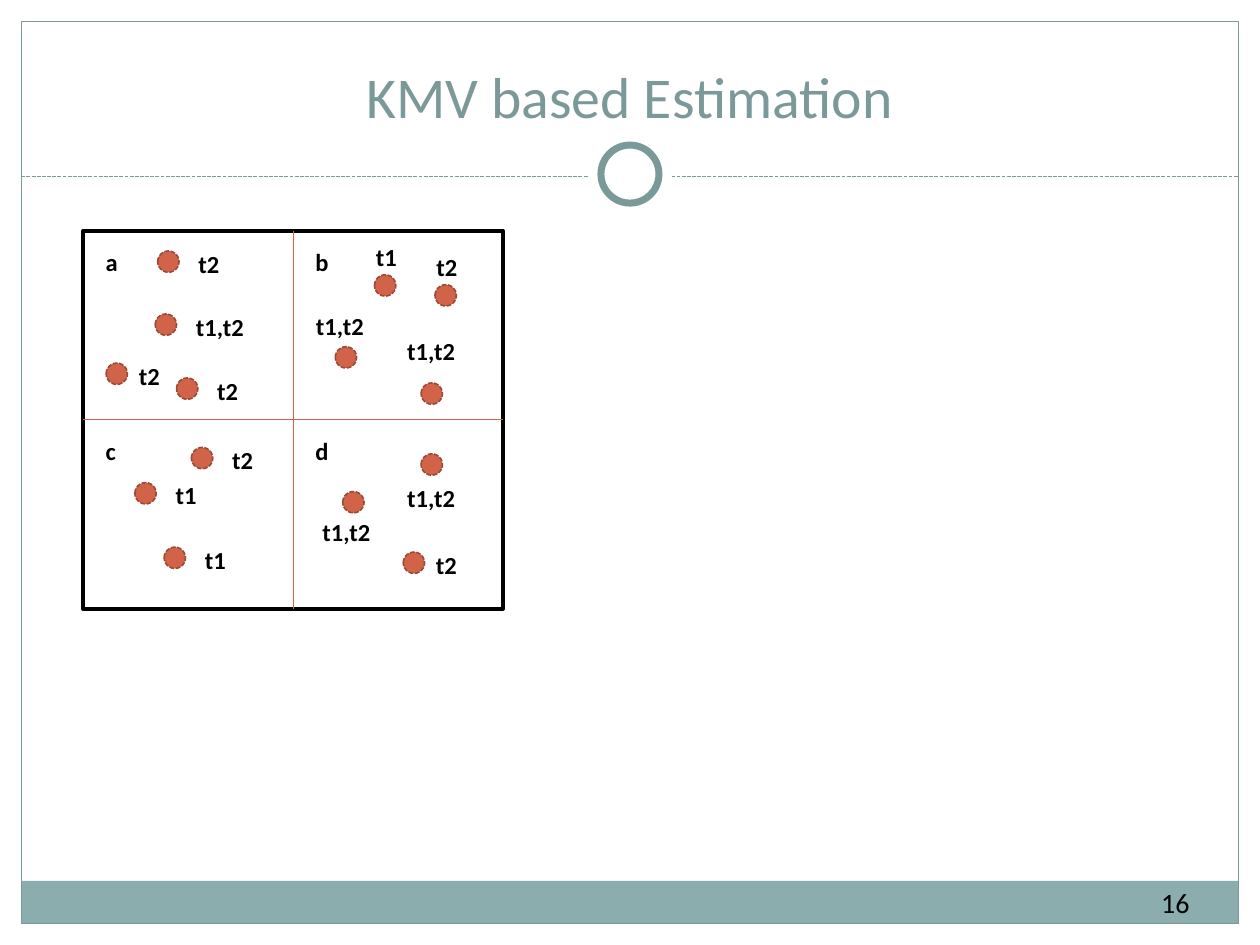
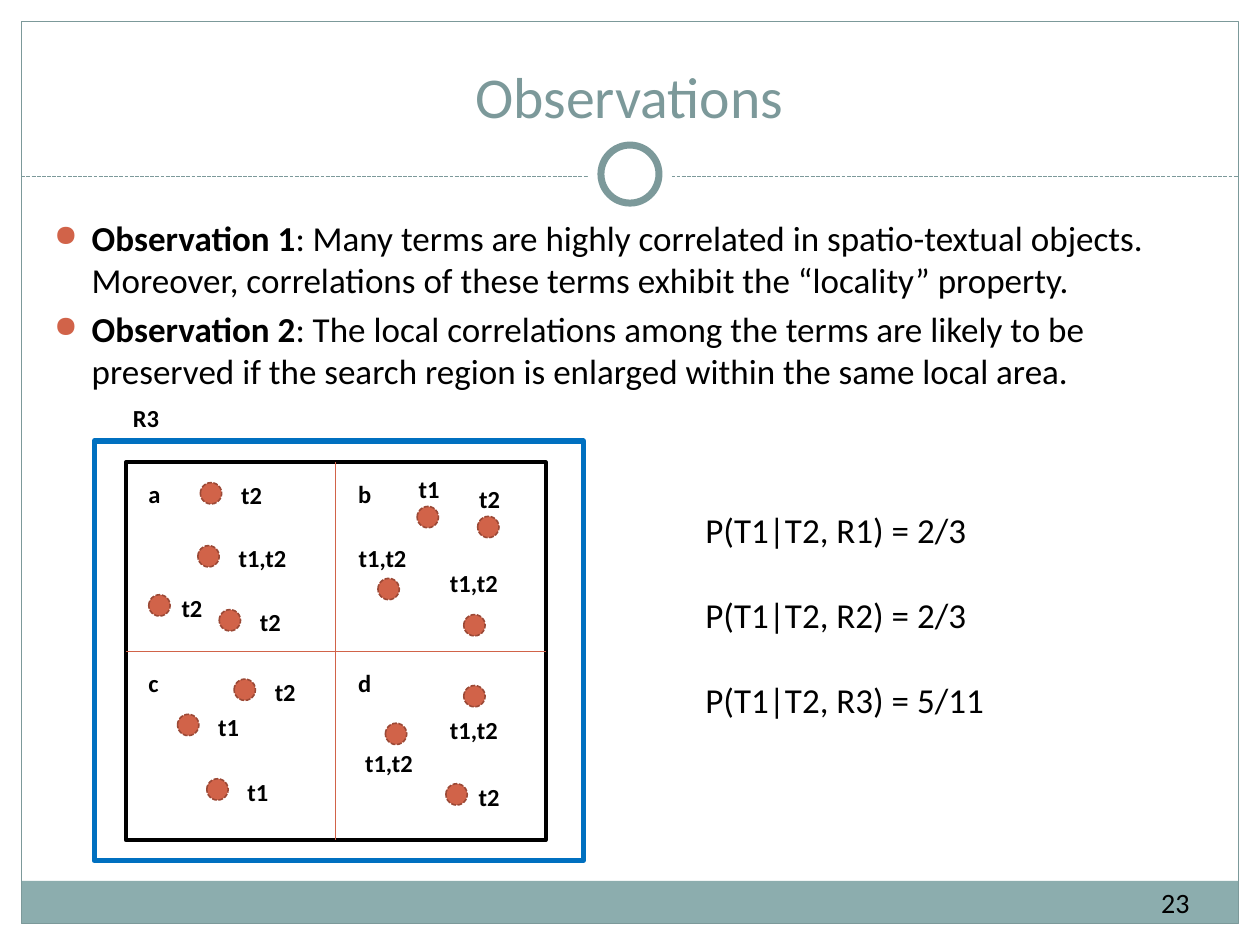
from typing import NamedTuple

from lxml.etree import SubElement
from pptx import Presentation
from pptx.dml.color import RGBColor
from pptx.enum.dml import MSO_LINE
from pptx.enum.shapes import MSO_CONNECTOR as LINK, MSO_SHAPE as SHAPE
from pptx.enum.text import MSO_ANCHOR as ANCHOR, MSO_AUTO_SIZE as FIT, PP_ALIGN as ALIGN
from pptx.oxml.ns import qn
from pptx.util import Cm, Pt


class Box(NamedTuple):
    x: float
    y: float
    w: float
    h: float


FONT = "Calibri"
WHITE = RGBColor(0xFF, 0xFF, 0xFF)
BLACK = RGBColor(0, 0, 0)
TEAL = RGBColor(0x7C, 0x99, 0x9A)
BAND = RGBColor(0x8C, 0xAD, 0xAE)
RUST = RGBColor(0xD1, 0x63, 0x49)
BROWN = RGBColor(0x9B, 0x49, 0x36)
BLUE = RGBColor(0, 0x70, 0xC0)

FRAME = Box(0.43, 0.43, 24.54, 18.19)
DOT = 0.43
RIGHT, NEAR = (0.57, -0.17), (0.41, -0.17)
ABOVE, OVER, HIGH = (-0.22, -0.78), (-0.64, -0.84), (-0.53, -1.07)
BELOW, UNDER = (-0.53, 0.46), (-0.66, 0.38)

POINTS = [
    (1.5, 0.41, "t2", RIGHT),
    (1.45, 1.68, "t1,t2", RIGHT),
    (0.46, 2.67, "t2", NEAR),
    (1.88, 2.97, "t2", RIGHT),
    (5.87, 0.89, "t1", ABOVE),
    (7.09, 1.09, "t2", ABOVE),
    (5.08, 2.34, "t1,t2", OVER),
    (6.81, 3.07, "t1,t2", HIGH),
    (2.18, 4.37, "t2", RIGHT),
    (1.04, 5.08, "t1", RIGHT),
    (1.63, 6.38, "t1", RIGHT),
    (6.81, 4.5, "t1,t2", BELOW),
    (5.23, 5.26, "t1,t2", UNDER),
    (6.45, 6.48, "t2", NEAR),
]

NOTES = [
    ("Observation 1", ": Many terms are highly correlated in spatio-textual objects. "
     "Moreover, correlations of these terms exhibit the “locality” property."),
    ("Observation 2", ": The local correlations among the terms are likely to be "
     "preserved if the search region is enlarged within the same local area."),
]
ODDS = ["P(T1|T2, R1) = 2/3", "P(T1|T2, R2) = 2/3", "P(T1|T2, R3) = 5/11"]


def place(box):
    return [Cm(side) for side in box]


def stroke(line, tint, width, dashed=False):
    line.color.rgb = tint
    line.width = Pt(width)
    if dashed:
        line.dash_style = MSO_LINE.SQUARE_DOT


def draw(shapes, kind, box, fill=None, tint=None, width=0.75, dashed=False):
    shape = shapes.add_shape(kind, *place(box))
    shape.shadow.inherit = False
    if fill is None:
        shape.fill.background()
    else:
        shape.fill.solid()
        shape.fill.fore_color.rgb = fill
    if tint is None:
        shape.line.fill.background()
    else:
        stroke(shape.line, tint, width, dashed)


def rule(shapes, x1, y1, x2, y2, tint, dashed=False):
    line = shapes.add_connector(LINK.STRAIGHT, Cm(x1), Cm(y1), Cm(x2), Cm(y2))
    stroke(line.line, tint, 0.75, dashed)
    SubElement(line._element.spPr, qn("a:effectLst"))


def style(para, size, tint=BLACK, bold=None):
    para.font.name = FONT
    para.font.size = Pt(size)
    para.font.color.rgb = tint
    para.font.bold = bold


def write(shapes, box, lines, size, bold=None, gap=0):
    frame = shapes.add_textbox(*place(box)).text_frame
    frame.word_wrap = True
    for i, line in enumerate(lines):
        para = frame.add_paragraph() if i else frame.paragraphs[0]
        para.text = line
        style(para, size, bold=bold)
        if i:
            para.space_before = Pt(gap)
    return frame


def label(shapes, x, y, text):
    write(shapes, Box(x, y, 2.03, 0.86), [text], 14, bold=True)


def ring(shapes, x, y, size, **look):
    draw(shapes, SHAPE.OVAL, Box(x - size / 2, y - size / 2, size, size), WHITE, **look)


def base(deck, text, number, box=FRAME):
    slide = deck.slides.add_slide(deck.slide_layouts[5])
    shapes = slide.shapes
    x, y, w, h = box
    mid, split = x + w / 2, y + 3.13
    draw(shapes, SHAPE.RECTANGLE, Box(x, y + h - 0.86, w, 0.86), BAND)
    draw(shapes, SHAPE.RECTANGLE, box, tint=TEAL)
    rule(shapes, x, split, x + w, split, TEAL, dashed=True)
    ring(shapes, mid, split - 0.05, 1.7)
    ring(shapes, mid, split - 0.05, 1.17, tint=TEAL, width=4)

    title = shapes.title
    title.left, title.top, title.width, title.height = place(
        Box(x + 0.41, y + 0.21, w - 0.84, 2.11))
    frame = title.text_frame
    frame.text = text
    frame.auto_size = FIT.NONE
    frame.vertical_anchor = ANCHOR.BOTTOM
    frame.paragraphs[0].alignment = ALIGN.CENTER
    style(frame.paragraphs[0], 33, TEAL)

    page = write(shapes, Box(x + w - 1.91, y + h - 1.04, 1.27, 1.22), [number], 16)
    page.margin_left = page.margin_right = Cm(0.13)
    page.vertical_anchor = ANCHOR.MIDDLE
    page.paragraphs[0].alignment = ALIGN.CENTER
    return shapes


def grid(shapes, box):
    x, y, w, h = box
    parts = shapes.add_group_shape().shapes
    draw(parts, SHAPE.RECTANGLE, box, tint=BLACK, width=2.25)
    rule(parts, x, y + h / 2, x + w, y + h / 2, RUST)
    rule(parts, x + w / 2, y, x + w / 2, y + h, RUST)
    for i, name in enumerate("abcd"):
        row, col = divmod(i, 2)
        label(parts, x + col * w / 2 + 0.2, y + row * h / 2 + 0.21, name)
    for px, py, text, (dx, dy) in POINTS:
        draw(parts, SHAPE.OVAL, Box(x + px, y + py, DOT, DOT), RUST, BROWN, 0.9, dashed=True)
        label(parts, x + px + dx, y + py + dy, text)


def bullets(shapes, box, notes):
    frame = write(shapes, box, [""] * len(notes), 20)
    for para, (head, rest) in zip(frame.paragraphs, notes):
        para.space_before = Pt(4)
        for text, bold in ((head, True), (rest, False)):
            run = para.add_run()
            run.text = text
            run.font.bold = bold
        props = para._p.get_or_add_pPr()
        props.set("marL", str(Cm(0.76)))
        props.set("indent", str(-Cm(0.76)))
        tint = SubElement(props, qn("a:buClr"))
        SubElement(tint, qn("a:srgbClr"), val=str(RUST))
        SubElement(props, qn("a:buSzPct"), val="85000")
        SubElement(props, qn("a:buChar"), char="●")
        marks = props.find(qn("a:defRPr"))
        if marks is not None:
            props.append(marks)


def region(shapes, box, name):
    draw(shapes, SHAPE.RECTANGLE, box, tint=BLUE, width=3)
    label(shapes, box.x + 0.53, box.y - 0.89, name)


def main():
    deck = Presentation()
    deck.slide_width, deck.slide_height = Cm(25.4), Cm(19.05)

    shapes = base(deck, "KMV based Estimation", "16")
    grid(shapes, Box(1.68, 4.65, 8.46, 7.62))

    shapes = base(deck, "Observations", "23")
    bullets(shapes, Box(0.84, 4.24, 23.62, 12.7), NOTES)
    grid(shapes, Box(2.54, 9.32, 8.46, 7.62))
    write(shapes, Box(13.97, 10.13, 7.82, 4.52), ODDS, 20, gap=24.4)
    region(shapes, Box(1.9, 8.89, 9.86, 8.46), "R3")

    deck.save("out.pptx")


if __name__ == "__main__":
    main()
